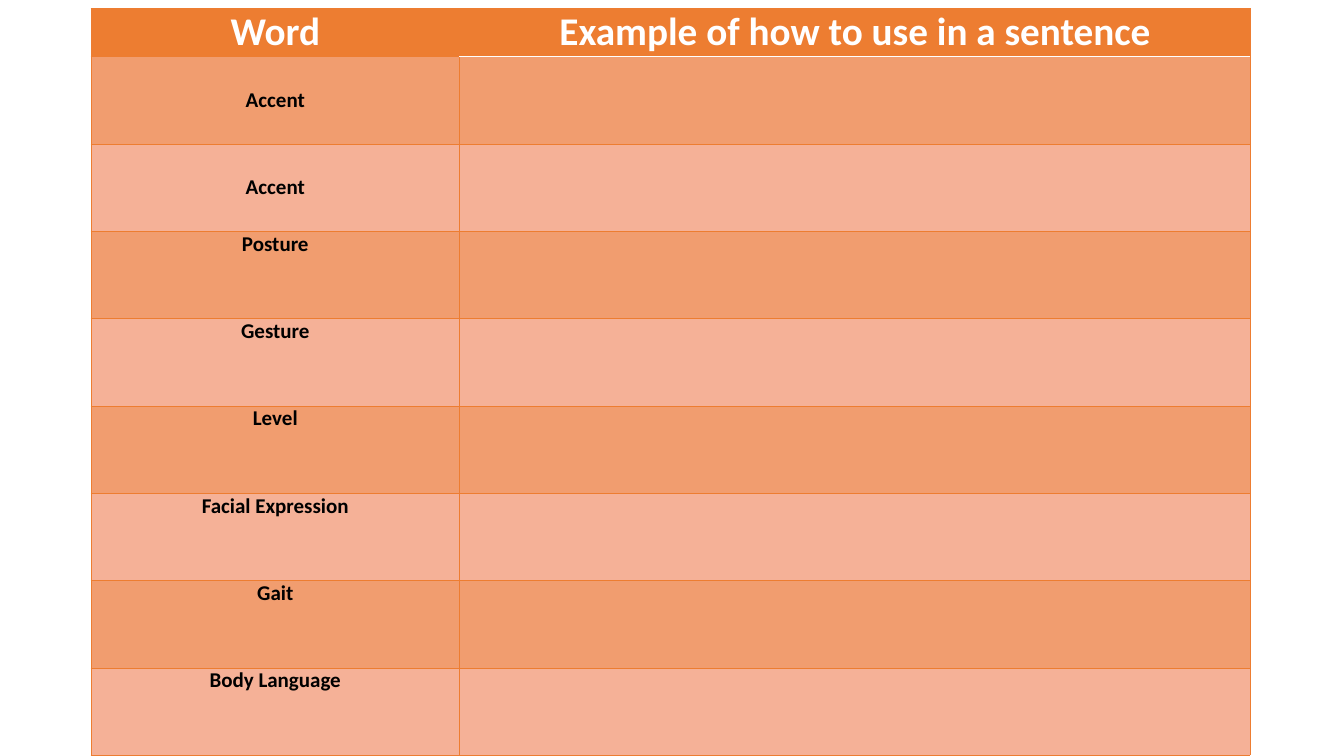
import pptx
import pptx.dml.color
import pptx.enum.text
import pptx.oxml
import pptx.oxml.ns
import pptx.util

Pt = pptx.util.Pt
RGBColor = pptx.dml.color.RGBColor
Anchor = pptx.enum.text.MSO_ANCHOR

ORANGE = RGBColor(0xED, 0x7D, 0x31)
DARK_BAND = RGBColor(0xF1, 0x9D, 0x6F)
LIGHT_BAND = RGBColor(0xF5, 0xB1, 0x97)
WHITE = RGBColor(0xFF, 0xFF, 0xFF)
BLACK = RGBColor(0x00, 0x00, 0x00)

HEADINGS = ["Word", "Example of how to use in a sentence"]
WORDS = ["Accent", "Accent", "Posture", "Gesture", "Level",
         "Facial Expression", "Gait", "Body Language"]
CENTRED_ROWS = 2
HEADER_HEIGHT = 34.3
WORD_SHARE = 0.318


def write_text(cell, text, size, color, anchor=Anchor.TOP):
    cell.margin_left = cell.margin_right = Pt(5)
    cell.margin_top = cell.margin_bottom = Pt(0)
    cell.vertical_anchor = anchor
    paragraph = cell.text_frame.paragraphs[0]
    paragraph.alignment = pptx.enum.text.PP_ALIGN.CENTER
    run = paragraph.add_run()
    run.text = text
    run.font.name = "Calibri"
    run.font.size = Pt(size)
    run.font.bold = True
    run.font.color.rgb = color


def format_cell(cell, fill, **border_colors):
    properties = cell._tc.get_or_add_tcPr()
    for side in "LRTB":
        color = border_colors.get(side, ORANGE)
        width = Pt(0.5 if color == ORANGE else 1)
        properties.append(pptx.oxml.parse_xml(
            f'<a:ln{side} {pptx.oxml.ns.nsdecls("a")} w="{width}">'
            f'<a:solidFill><a:srgbClr val="{color}"/></a:solidFill></a:ln{side}>'))
    cell.fill.solid()
    cell.fill.fore_color.rgb = fill


def add_word_table(slide, left, top, width, height):
    shape = slide.shapes.add_table(len(WORDS) + 1, len(HEADINGS),
                                   Pt(left), Pt(top), Pt(width), Pt(height))
    table = shape.table
    table.columns[0].width = Pt(width * WORD_SHARE)
    table.columns[1].width = Pt(width * (1 - WORD_SHARE))
    table.rows[0].height = Pt(HEADER_HEIGHT)
    for column, heading in enumerate(HEADINGS):
        cell = table.cell(0, column)
        write_text(cell, heading, size=28, color=WHITE)
        format_cell(cell, ORANGE, B=WHITE if column else ORANGE)
    for row, word in enumerate(WORDS, start=1):
        table.rows[row].height = Pt((height - HEADER_HEIGHT) / len(WORDS))
        anchor = Anchor.MIDDLE if row <= CENTRED_ROWS else Anchor.TOP
        write_text(table.cell(row, 0), word, size=15, color=BLACK, anchor=anchor)
        for column in range(len(HEADINGS)):
            top_color = WHITE if row == 1 and column else ORANGE
            format_cell(table.cell(row, column),
                        DARK_BAND if row % 2 else LIGHT_BAND, T=top_color)


def main():
    presentation = pptx.Presentation()
    presentation.slide_width = Pt(960)
    presentation.slide_height = Pt(540)
    slide = presentation.slides.add_slide(presentation.slide_layouts[6])
    add_word_table(slide, left=65, top=6.2, width=828, height=533.2)
    presentation.save("out.pptx")


if __name__ == "__main__":
    main()
